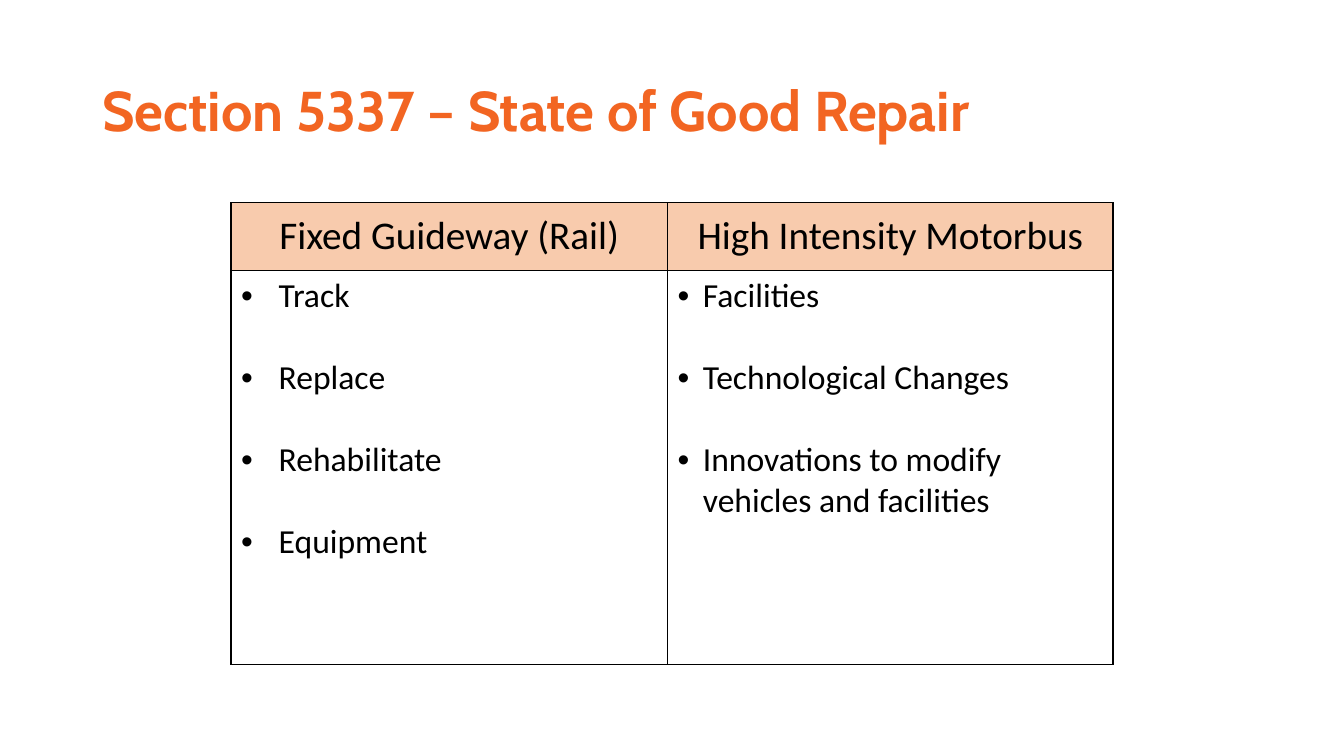
from lxml import etree
from pptx import Presentation
from pptx.dml.color import RGBColor
from pptx.enum.text import MSO_ANCHOR, PP_ALIGN
from pptx.oxml.ns import qn
from pptx.util import Cm, Pt

MIDDLE = MSO_ANCHOR.MIDDLE
CENTER = PP_ALIGN.CENTER

COLORS = {"title": "F26522", "header": "F8CBAD", "text": "000000", "border": "000000"}
TITLE_FONT, BODY_FONT = "Cabin", "Calibri"

# Header, bullet indent in cm, bullet items
COLUMNS = [
    ("Fixed Guideway (Rail)", 0.95,
     ["Track", "Replace", "Rehabilitate", "Equipment"]),
    ("High Intensity Motorbus", 0.64,
     ["Facilities", "Technological Changes",
      "Innovations to modify vehicles and facilities"]),
]


class SlideBuilder:
    def __init__(self, slide):
        self.slide = slide

    def style(self, p, size, color, font=BODY_FONT, bold=False):
        for r in p.runs:
            r.font.name = font
            r.font.size = Pt(size)
            r.font.bold = bold
            r.font.color.rgb = RGBColor.from_string(COLORS[color])

    def title(self, text, left, top, width, height):
        sp = self.slide.shapes.add_textbox(Cm(left), Cm(top), Cm(width), Cm(height))
        tf = sp.text_frame
        tf.word_wrap = True
        tf.vertical_anchor = MIDDLE
        tf.text = text
        p = tf.paragraphs[0]
        p.line_spacing = 0.9
        self.style(p, 40, "title", TITLE_FONT, bold=True)

    def borders(self, cell):
        tcPr = cell._tc.get_or_add_tcPr()
        for side in ("a:lnL", "a:lnR", "a:lnT", "a:lnB"):
            ln = etree.SubElement(tcPr, qn(side), w=str(Pt(1)))
            fill = etree.SubElement(ln, qn("a:solidFill"))
            etree.SubElement(fill, qn("a:srgbClr"), val=COLORS["border"])

    def bullet(self, p, indent):
        pPr = p._p.get_or_add_pPr()
        pPr.set("marL", str(Cm(indent)))
        pPr.set("indent", str(-Cm(indent)))
        etree.SubElement(pPr, qn("a:buFont"), typeface="Arial")
        etree.SubElement(pPr, qn("a:buChar"), char="•")

    def header_cell(self, cell, text):
        self.borders(cell)
        cell.fill.solid()
        cell.fill.fore_color.rgb = RGBColor.from_string(COLORS["header"])
        cell.vertical_anchor = MIDDLE
        cell.text = text
        p = cell.text_frame.paragraphs[0]
        p.alignment = CENTER
        self.style(p, 28, "text")

    def bullet_cell(self, cell, items, indent):
        self.borders(cell)
        cell.fill.background()
        tf = cell.text_frame
        for i, item in enumerate(items):
            p = tf.add_paragraph() if i else tf.paragraphs[0]
            p.text = item
            self.bullet(p, indent)
            if i:
                p.space_before = Pt(29.3)
            self.style(p, 24, "text")

    def table(self, columns, left, top, widths, heights):
        frame = self.slide.shapes.add_table(
            len(heights), len(columns), Cm(left), Cm(top),
            Cm(sum(widths)), Cm(sum(heights)))
        table = frame.table
        table.first_row = table.horz_banding = False
        for row, height in zip(table.rows, heights):
            row.height = Cm(height)
        for i, (header, indent, items) in enumerate(columns):
            table.columns[i].width = Cm(widths[i])
            self.header_cell(table.cell(0, i), header)
            self.bullet_cell(table.cell(1, i), items, indent)


def main():
    prs = Presentation()
    prs.slide_width, prs.slide_height = Cm(33.87), Cm(19.05)
    s = SlideBuilder(prs.slides.add_slide(prs.slide_layouts[6]))
    s.title("Section 5337 – State of Good Repair", 2.33, 1.01, 29.21, 3.68)
    s.table(COLUMNS, 5.82, 5.11, widths=[11, 11.23], heights=[1.7, 9.93])
    prs.save("out.pptx")


if __name__ == "__main__":
    main()
